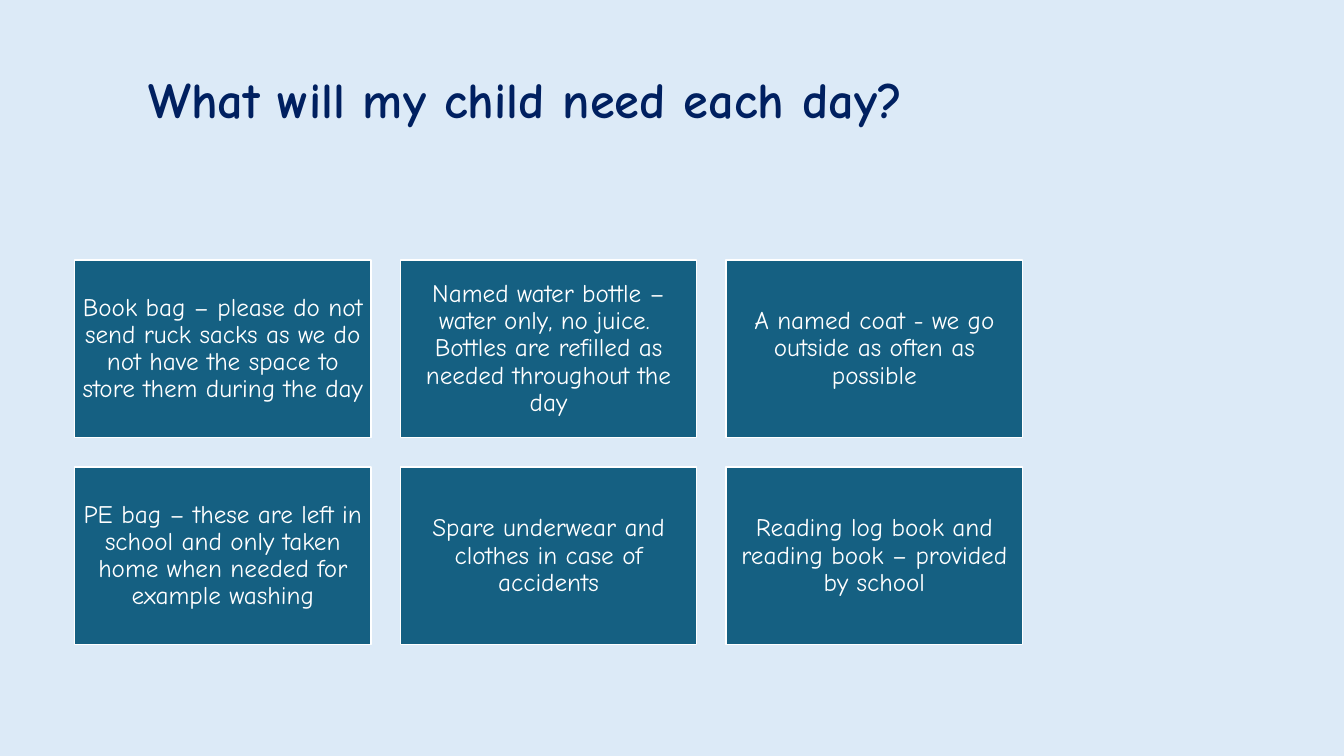
from dataclasses import dataclass

from pptx import Presentation
from pptx.dml.color import RGBColor
from pptx.enum.shapes import MSO_SHAPE
from pptx.enum.text import MSO_ANCHOR, PP_ALIGN
from pptx.shapes.autoshape import Shape
from pptx.slide import Slide
from pptx.util import Cm, Pt

RECTANGLE = MSO_SHAPE.RECTANGLE
CENTER = PP_ALIGN.CENTER
MIDDLE = MSO_ANCHOR.MIDDLE
BOTTOM = MSO_ANCHOR.BOTTOM

FONT = "Comic Neue"
BACKGROUND = "DCEAF7"
NAVY = "002060"
TEAL = "156082"
WHITE = "FFFFFF"

# Card grid, in centimetres
COLUMNS = 3
GRID_LEFT, GRID_TOP = 1.88, 6.55
CARD_WIDTH, CARD_HEIGHT = 7.47, 4.48
CARD_GAP = 0.74
CARD_INSET = 0.18


@dataclass(frozen=True)
class TextStyle:
    size: int
    color: str
    anchor: MSO_ANCHOR
    bold: bool = False


TITLE_STYLE = TextStyle(36, NAVY, BOTTOM, bold=True)
CARD_STYLE = TextStyle(18, WHITE, MIDDLE)

DAILY_ITEMS = [
    "Book bag – please do not send ruck sacks as we do not have the space "
    "to store them during the day",
    "Named water bottle – water only, no juice.  Bottles are refilled as "
    "needed throughout the day",
    "A named coat - we go outside as often as possible",
    "PE bag – these are left in school and only taken home when needed "
    "for example washing",
    "Spare underwear and clothes in case of accidents",
    "Reading log book and reading book – provided by school",
]


def color(value: str) -> RGBColor:
    return RGBColor.from_string(value)


def write_text(shape: Shape, text: str, style: TextStyle) -> None:
    frame = shape.text_frame
    frame.word_wrap = True
    frame.vertical_anchor = style.anchor
    paragraph = frame.paragraphs[0]
    paragraph.alignment = CENTER
    paragraph.line_spacing = 0.9
    run = paragraph.add_run()
    run.text = text
    run.font.name = FONT
    run.font.size = Pt(style.size)
    run.font.bold = style.bold
    run.font.color.rgb = color(style.color)


def add_title(slide: Slide, text: str) -> None:
    title = slide.shapes.add_textbox(Cm(0.86), Cm(-1.07), Cm(24.77), Cm(4.45))
    write_text(title, text, TITLE_STYLE)


def add_card(slide: Slide, index: int, text: str) -> None:
    row, column = divmod(index, COLUMNS)
    card = slide.shapes.add_shape(
        RECTANGLE,
        Cm(GRID_LEFT + column * (CARD_WIDTH + CARD_GAP)),
        Cm(GRID_TOP + row * (CARD_HEIGHT + CARD_GAP)),
        Cm(CARD_WIDTH),
        Cm(CARD_HEIGHT),
    )
    card.shadow.inherit = False
    card.fill.solid()
    card.fill.fore_color.rgb = color(TEAL)
    card.line.color.rgb = color(WHITE)
    card.line.width = Pt(1)
    frame = card.text_frame
    frame.margin_left = frame.margin_right = Cm(CARD_INSET)
    frame.margin_top = frame.margin_bottom = Cm(CARD_INSET)
    write_text(card, text, CARD_STYLE)


def main() -> None:
    presentation = Presentation()
    presentation.slide_width = Cm(33.87)
    presentation.slide_height = Cm(19.05)
    slide = presentation.slides.add_slide(presentation.slide_layouts[6])

    # Background
    slide.background.fill.solid()
    slide.background.fill.fore_color.rgb = color(BACKGROUND)

    # Title and cards
    add_title(slide, "What will my child need each day?")
    for index, item in enumerate(DAILY_ITEMS):
        add_card(slide, index, item)

    presentation.save("out.pptx")


if __name__ == "__main__":
    main()
